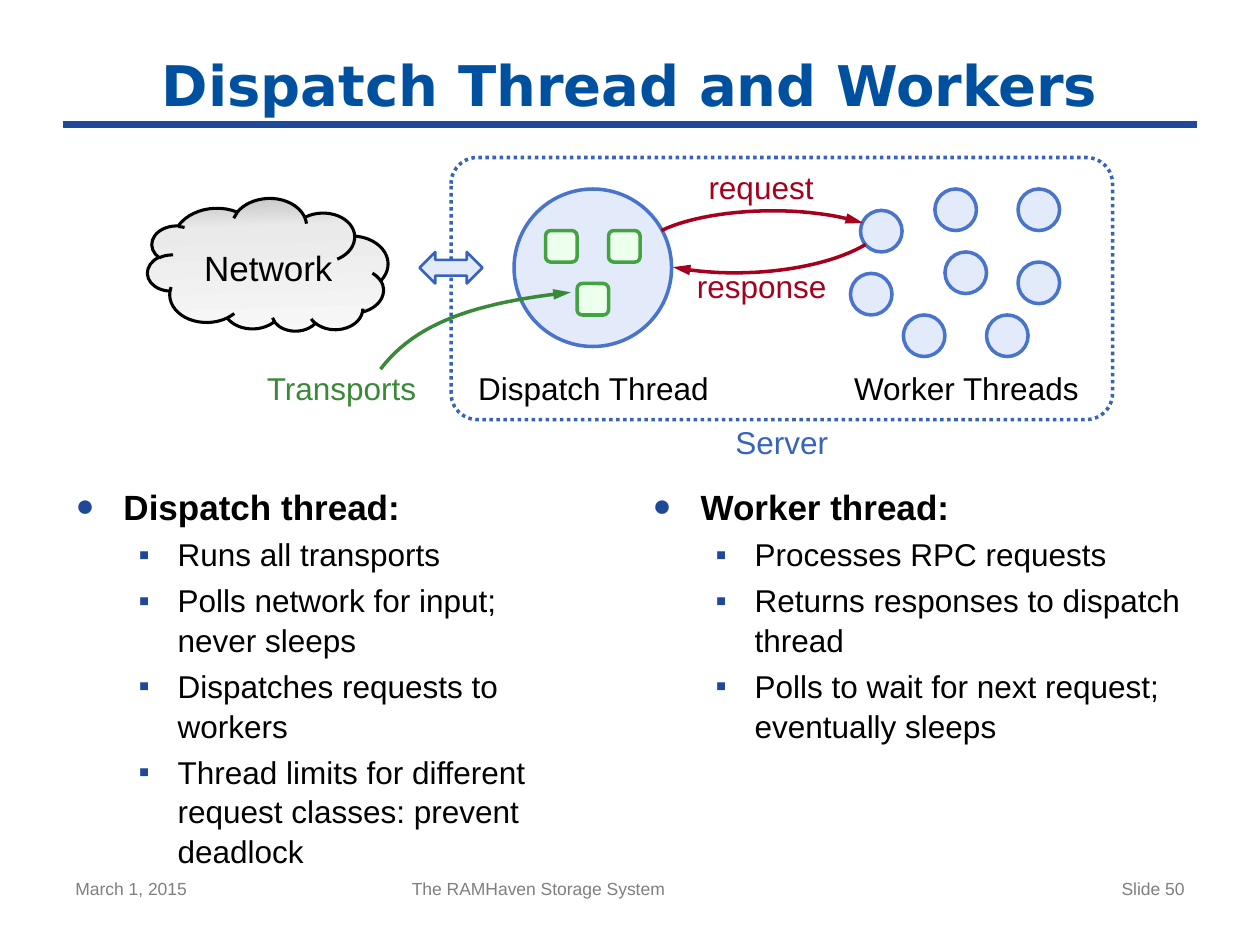
"""Build the slide "Dispatch Thread and Workers"."""
from copy import deepcopy

from lxml import etree
from pptx import Presentation
from pptx.dml.color import RGBColor
from pptx.enum.dml import MSO_LINE
from pptx.enum.shapes import MSO_CONNECTOR, MSO_SHAPE
from pptx.enum.text import MSO_ANCHOR, MSO_AUTO_SIZE, PP_ALIGN
from pptx.oxml.ns import qn
from pptx.util import Inches, Pt

LEFT, CENTER, RIGHT = PP_ALIGN.LEFT, PP_ALIGN.CENTER, PP_ALIGN.RIGHT
TOP, MIDDLE = MSO_ANCHOR.TOP, MSO_ANCHOR.MIDDLE
OVAL, ROUNDED = MSO_SHAPE.OVAL, MSO_SHAPE.ROUNDED_RECTANGLE
CLOUD, DOUBLE_ARROW = MSO_SHAPE.CLOUD, MSO_SHAPE.LEFT_RIGHT_ARROW
STRAIGHT, DOTTED, FIXED = MSO_CONNECTOR.STRAIGHT, MSO_LINE.ROUND_DOT, MSO_AUTO_SIZE.NONE

BLACK = RGBColor(0x00, 0x00, 0x00)
WHITE = RGBColor(0xFF, 0xFF, 0xFF)
GRAY = RGBColor(0x7F, 0x7F, 0x7F)
TITLE_BLUE = RGBColor(0x00, 0x50, 0xA0)
RULE_BLUE = RGBColor(0x1F, 0x48, 0x99)
SERVER_BLUE = RGBColor(0x36, 0x63, 0xBC)
THREAD_BLUE = RGBColor(0x49, 0x74, 0xCB)
PALE_BLUE = RGBColor(0xE3, 0xEA, 0xF9)
RED = RGBColor(0xA5, 0x00, 0x1E)
GREEN = RGBColor(0x39, 0x89, 0x39)
TRANSPORT_GREEN = RGBColor(0x43, 0xA3, 0x43)
PALE_GREEN = RGBColor(0xED, 0xFF, 0xED)
CLOUD_STOPS = [
    (0, RGBColor(0xF8, 0xF8, 0xF8)),
    (0.76, RGBColor(0xEA, 0xEA, 0xEA)),
    (1, RGBColor(0xC0, 0xC0, 0xC0)),
]

TITLE = "Dispatch Thread and Workers"
COLUMNS = [
    (0.5, "Dispatch thread:", [
        "Runs all transports",
        "Polls network for input;\nnever sleeps",
        "Dispatches requests to workers",
        "Thread limits for different request classes: prevent deadlock",
    ]),
    (5.08, "Worker thread:", [
        "Processes RPC requests",
        "Returns responses to dispatch thread",
        "Polls to wait for next request; eventually sleeps",
    ]),
]
FOOTERS = [
    ("March 1, 2015", 0.5, 2.33, LEFT),
    ("The RAMHaven Storage System", 3.17, 3.75, LEFT),
    ("Slide 50", 7.17, 2.33, RIGHT),
]
LABELS = [
    ("Network", (1.47, 1.91, 1.32, 0.44), 20, BLACK),
    ("Dispatch Thread", (3.42, 2.88, 2.58, 0.4), 18, BLACK),
    ("Worker Threads", (6.67, 2.88, 2, 0.4), 18, BLACK),
    ("Transports", (1.92, 2.88, 1.58, 0.4), 18, GREEN),
]
TIGHT_LABELS = [
    ("request", (5.5, 1.33, 1.08, 0.3), 18, RED),
    ("response", (5.42, 2.12, 1.25, 0.3), 18, RED),
    ("Server", (3.58, 3.36, 5.25, 0.3), 18, SERVER_BLUE),
]
TRANSPORTS = [(4.33, 1.83), (4.83, 1.83), (4.58, 2.25)]
WORKERS = [(6.75, 2.17), (7.42, 1.5), (7.17, 2.5), (8.08, 1.5),
           (7.5, 2), (7.83, 2.5), (8.08, 2.08), (6.83, 1.67)]
ARROWS = [
    ([(5.25, 1.83), (5.6, 1.66), (6.34, 1.61), (6.85, 1.77)], RED),
    ([(6.87, 1.94), (6.56, 2.13), (5.9, 2.23), (5.34, 2.12)], RED),
    ([(3.02, 2.93), (3.3, 2.56), (3.78, 2.4), (4.53, 2.32)], GREEN),
]
CURVE_STEPS = 24


def write(paragraph, text, *, size=18, color=BLACK, bold=False, align=LEFT, font="Arial"):
    paragraph.text = text
    paragraph.alignment = align
    for run in paragraph.runs:
        run.font.name, run.font.size, run.font.bold = font, Pt(size), bold
        run.font.color.rgb = color
    for line_break in paragraph._p.findall(qn("a:br")):
        etree.SubElement(line_break, qn("a:rPr"), sz=str(size * 100))


def place(part, box):
    part.left, part.top, part.width, part.height = map(Inches, box)


def add_label(slide, text, box, inset=None, **style):
    label = slide.shapes.add_textbox(*map(Inches, box))
    frame = label.text_frame
    frame.word_wrap = True
    if inset is not None:
        frame.margin_left = frame.margin_right = Inches(inset)
        frame.margin_top = frame.margin_bottom = Inches(inset)
    write(frame.paragraphs[0], text, **style)


def add_part(slide, kind, box, fill, line, width=2):
    part = slide.shapes.add_shape(kind, *map(Inches, box))
    part.shadow.inherit = False
    if fill is not None:
        part.fill.solid()
        part.fill.fore_color.rgb = fill
    part.line.color.rgb = line
    part.line.width = Pt(width)
    return part


def add_bullet(paragraph, char, indent, hanging, percent):
    properties = paragraph._p.get_or_add_pPr()
    properties.set("marL", str(Inches(indent)))
    properties.set("indent", str(-Inches(hanging)))
    color = etree.SubElement(properties, qn("a:buClr"))
    etree.SubElement(color, qn("a:srgbClr"), val=str(RULE_BLUE))
    etree.SubElement(properties, qn("a:buSzPct"), val=str(percent * 1000))
    etree.SubElement(properties, qn("a:buFont"), typeface="Arial")
    etree.SubElement(properties, qn("a:buChar"), char=char)


def fill_column(body, left, heading, points):
    place(body, (left, 3.8, 4.42, 3.12))
    frame = body.text_frame
    frame.auto_size, frame.vertical_anchor = FIXED, TOP
    first = frame.paragraphs[0]
    write(first, heading, size=20, bold=True)
    first.space_before = Pt(10)
    add_bullet(first, "●", 0.38, 0.38, 90)
    for point in points:
        paragraph = frame.add_paragraph()
        paragraph.level = 1
        write(paragraph, point)
        paragraph.space_before, paragraph.line_spacing = Pt(3.6), 1.05
        add_bullet(paragraph, "▪", 0.81, 0.31, 100)


def add_network(slide):
    cloud = add_part(slide, CLOUD, (1.17, 1.58, 1.91, 1.06), None, BLACK, 1.75)
    cloud.rotation = 358
    cloud._element.spPr.find(qn("a:xfrm")).set("flipV", "1")
    cloud.fill.gradient()
    cloud.fill.gradient_angle = 270
    stop_list = cloud._element.spPr.find(qn("a:gradFill")).find(qn("a:gsLst"))
    stop_list.append(deepcopy(stop_list[0]))
    for stop, (position, color) in zip(cloud.fill.gradient_stops, CLOUD_STOPS):
        stop.position, stop.color.rgb = position, color


def bezier(points, t):
    weights = ((1 - t) ** 3, 3 * t * (1 - t) ** 2, 3 * t ** 2 * (1 - t), t ** 3)
    return tuple(Inches(sum(w * p[axis] for w, p in zip(weights, points))) for axis in (0, 1))


def add_curved_arrow(slide, points, color):
    start, *rest = [bezier(points, step / CURVE_STEPS) for step in range(CURVE_STEPS + 1)]
    builder = slide.shapes.build_freeform(*start)
    builder.add_line_segments(rest, close=False)
    arrow = builder.convert_to_shape()
    arrow.shadow.inherit = False
    arrow.fill.background()
    arrow.line.color.rgb = color
    arrow.line.width = Pt(2)
    line = arrow._element.spPr.find(qn("a:ln"))
    etree.SubElement(line, qn("a:round"))
    etree.SubElement(line, qn("a:tailEnd"), type="triangle", w="med", len="lg")


def main():
    deck = Presentation()
    deck.slide_width, deck.slide_height = Inches(10), Inches(7.5)
    slide = deck.slides.add_slide(deck.slide_layouts[3])
    title, *bodies = slide.placeholders

    place(title, (0.5, 0.33, 9, 0.67))
    title.text_frame.auto_size, title.text_frame.vertical_anchor = FIXED, MIDDLE
    write(title.text_frame.paragraphs[0], TITLE, size=32, color=TITLE_BLUE,
          bold=True, align=CENTER, font="DejaVu Sans")
    rule = slide.shapes.add_connector(STRAIGHT, *map(Inches, (0.5, 0.99, 9.5, 0.99)))
    rule.line.color.rgb, rule.line.width = RULE_BLUE, Pt(4)
    etree.SubElement(rule._element.spPr, qn("a:effectLst"))

    for body, column in zip(bodies, COLUMNS):
        fill_column(body, *column)
    for text, left, width, align in FOOTERS:
        add_label(slide, text, (left, 6.92, width, 0.43), size=10, color=GRAY, align=align)

    server = add_part(slide, ROUNDED, (3.58, 1.25, 5.25, 2.08), WHITE, SERVER_BLUE)
    server.adjustments[0] = 0.1
    server.line.dash_style = DOTTED
    add_network(slide)
    add_part(slide, OVAL, (4.08, 1.5, 1.25, 1.25), PALE_BLUE, THREAD_BLUE)
    for corner in TRANSPORTS:
        add_part(slide, ROUNDED, (*corner, 0.25, 0.25), PALE_GREEN, TRANSPORT_GREEN)
    for corner in WORKERS:
        add_part(slide, OVAL, (*corner, 0.33, 0.33), PALE_BLUE, THREAD_BLUE)
    add_part(slide, DOUBLE_ARROW, (3.33, 2, 0.5, 0.25), PALE_BLUE, SERVER_BLUE, 1.5)
    for points, color in ARROWS:
        add_curved_arrow(slide, points, color)
    for labels, inset in ((LABELS, None), (TIGHT_LABELS, 0)):
        for text, box, size, color in labels:
            add_label(slide, text, box, inset, size=size, color=color, align=CENTER)
    deck.save("out.pptx")


if __name__ == "__main__":
    main()
